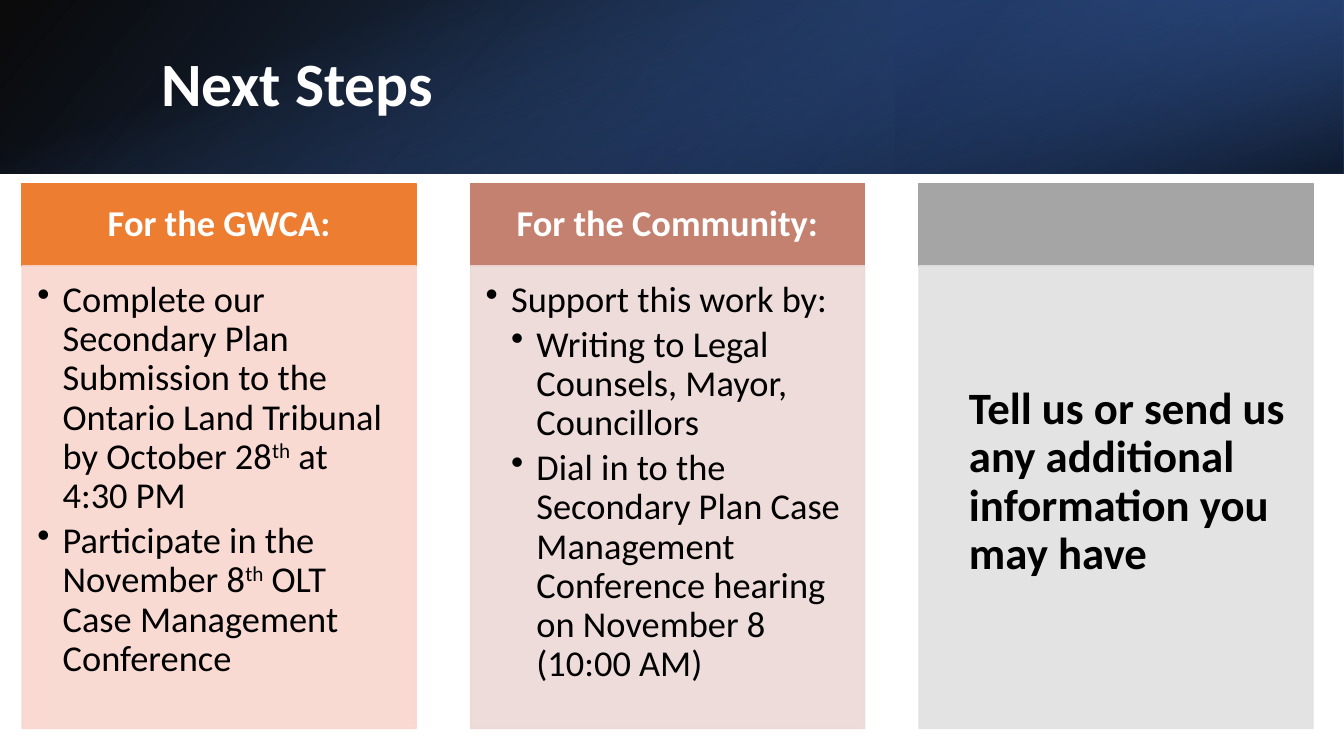
from dataclasses import dataclass, field

from lxml.etree import SubElement as Sub
from pptx import Presentation
from pptx.dml.color import RGBColor as Rgb
from pptx.enum.shapes import MSO_SHAPE as Kind
from pptx.enum.text import MSO_ANCHOR as Anchor, MSO_AUTO_SIZE as Auto, PP_ALIGN as Align
from pptx.oxml.ns import qn
from pptx.util import Cm, Pt


@dataclass(frozen=True)
class Theme:
    face: str = "Calibri"
    white: str = "FFFFFF"
    black: str = "000000"
    title: int = 44
    large: int = 32
    text: int = 26


@dataclass(frozen=True)
class Stop:
    pos: int
    color: str
    alpha: int


@dataclass(frozen=True)
class Layer:
    box: tuple[float, float, float, float]
    stops: tuple[Stop, Stop]
    angle: int
    turn: int = 0
    flip: bool = False


@dataclass(frozen=True)
class Item:
    text: str  # parts between ^ marks are raised
    level: int = 1  # 0 means no bullet


@dataclass(frozen=True)
class Panel:
    head: str
    dark: str
    light: str
    items: tuple[Item, ...]
    size: int = Theme.text
    bold: bool = False
    pad: tuple[float, float, float, float] = field(default=(0.38, 0.38, 0.5, 0.58))


THEME = Theme()
WIDE, HIGH = 33.87, 19.05
BAND = 4.37
LEFT, STEP, SPAN = 0.56, 11.3, 9.93
HEAD_TOP, HEAD_HIGH = 4.62, 2.08
BODY_TOP, BODY_HIGH = 6.7, 11.66
INDENT = 0.64

LAYERS = (
    Layer((0, 0, WIDE, BAND),
          (Stop(0, "000000", 96), Stop(100, "2F5597", 100)), 140, flip=True),
    Layer((WIDE * 2 / 3, 0, WIDE / 3, BAND),
          (Stop(19, "203864", 68), Stop(100, "4472C4", 79)), 320, 180, True),
    Layer(((WIDE - BAND) / 2, (BAND - WIDE) / 2, BAND, WIDE),
          (Stop(23, "4472C4", 0), Stop(99, "000000", 74)), 340, 90),
)

PANELS = (
    Panel("For the GWCA:", "ED7D31", "F8D7CE", (
        Item("Complete our Secondary Plan Submission to the Ontario Land Tribunal "
             "by October 28^th^ at 4:30 PM"),
        Item("Participate in the November 8^th^ OLT Case Management Conference"),
    )),
    Panel("For the Community:", "C48170", "EDD9D7", (
        Item("Support this work by:"),
        Item("Writing to Legal Counsels, Mayor, Councillors", 2),
        Item("Dial in to the Secondary Plan Case Management Conference hearing "
             "on November 8 (10:00 AM)", 2),
    )),
    Panel("", "A5A5A5", "E1E1E1", (
        Item("Tell us or send us any additional information you may have", 0),
    ), THEME.large, True, (1.26, 3.02, 0.63, 0.7)),
)


def assign(target, values: dict) -> None:
    for name, value in values.items():
        setattr(target, name, value)


def fade(color, alpha: int) -> None:
    Sub(color, qn("a:alpha"), val=str(alpha * 1000))


def block(slide, box: tuple, color: str, alpha: int = 100):
    """Add a plain rectangle with a matching outline."""
    shape = slide.shapes.add_shape(Kind.RECTANGLE, *map(Cm, box))
    shape.shadow.inherit = False
    for fill in (shape.fill, shape.line.fill):
        fill.solid()
        fill.fore_color.rgb = Rgb.from_string(color)
    shape.line.width = Pt(1)
    if alpha < 100:
        for node in list(shape.element.spPr.iter(qn("a:srgbClr"))):
            fade(node, alpha)
    return shape


def draw_layer(slide, layer: Layer) -> None:
    shape = block(slide, layer.box, THEME.black)
    shape.line.fill.background()
    shape.rotation = layer.turn
    if layer.flip:
        shape.element.spPr.find(qn("a:xfrm")).set("flipH", "1")
    shape.fill.gradient()
    grad = shape.element.spPr.find(qn("a:gradFill"))
    for node in list(grad):
        grad.remove(node)
    stops = Sub(grad, qn("a:gsLst"))
    for stop in layer.stops:
        mark = Sub(stops, qn("a:gs"), pos=str(stop.pos * 1000))
        fade(Sub(mark, qn("a:srgbClr"), val=stop.color), stop.alpha)
    Sub(grad, qn("a:lin"), ang=str(layer.angle * 60000), scaled="0")


def frame(shape, pad: tuple, anchor: Anchor):
    text = shape.text_frame
    sides = ("margin_left", "margin_top", "margin_right", "margin_bottom")
    assign(text, dict(zip(sides, map(Cm, pad))))
    assign(text, {"word_wrap": True, "auto_size": Auto.NONE, "vertical_anchor": anchor})
    return text


def write(para, item: Item, size: int, color: str, bold: bool,
          align: Align = Align.LEFT) -> None:
    assign(para, {"alignment": align, "line_spacing": 0.9,
                  "space_before": Pt(0), "space_after": Pt(size * 0.15)})
    if item.level:
        props = para._p.get_or_add_pPr()
        props.set("marL", str(Cm(INDENT * item.level)))
        props.set("indent", str(-Cm(INDENT)))
        Sub(props, qn("a:buChar"), char="•")
    for spot, part in enumerate(item.text.split("^")):
        run = para.add_run()
        run.text = part
        assign(run.font, {"name": THEME.face, "size": Pt(size), "bold": bold})
        run.font.color.rgb = Rgb.from_string(color)
        if spot % 2:
            run._r.get_or_add_rPr().set("baseline", "30000")


def draw_panel(slide, panel: Panel, left: float) -> None:
    head = block(slide, (left, HEAD_TOP, SPAN, HEAD_HIGH), panel.dark)
    if panel.head:
        text = frame(head, (0.5, 0.3, 0.5, 0.3), Anchor.MIDDLE)
        write(text.paragraphs[0], Item(panel.head, 0), THEME.text,
              THEME.white, True, Align.CENTER)

    body = block(slide, (left, BODY_TOP, SPAN, BODY_HIGH), panel.light, 90)
    text = frame(body, panel.pad, Anchor.TOP)
    for spot, item in enumerate(panel.items):
        para = text.add_paragraph() if spot else text.paragraphs[0]
        write(para, item, panel.size, THEME.black, panel.bold)


def draw_title(slide) -> None:
    title = slide.shapes.title
    assign(title, {"left": Cm(3.81), "top": Cm(0.97),
                   "width": Cm(27.89), "height": Cm(2.44)})
    text = frame(title, (0.25, 0.13, 0.25, 0.13), Anchor.MIDDLE)
    write(text.paragraphs[0], Item("Next Steps", 0), THEME.title, THEME.white, True)
    text.paragraphs[0].space_after = Pt(0)
    slide.shapes.element.append(title.element)  # bring in front of the banner


def main() -> None:
    deck = Presentation()
    assign(deck, {"slide_width": Cm(WIDE), "slide_height": Cm(HIGH)})
    slide = deck.slides.add_slide(deck.slide_layouts.get_by_name("Title Only"))

    # Banner and title
    for layer in LAYERS:
        draw_layer(slide, layer)
    draw_title(slide)

    # Three columns
    for spot, panel in enumerate(PANELS):
        draw_panel(slide, panel, LEFT + spot * STEP)

    deck.save("out.pptx")


if __name__ == "__main__":
    main()
